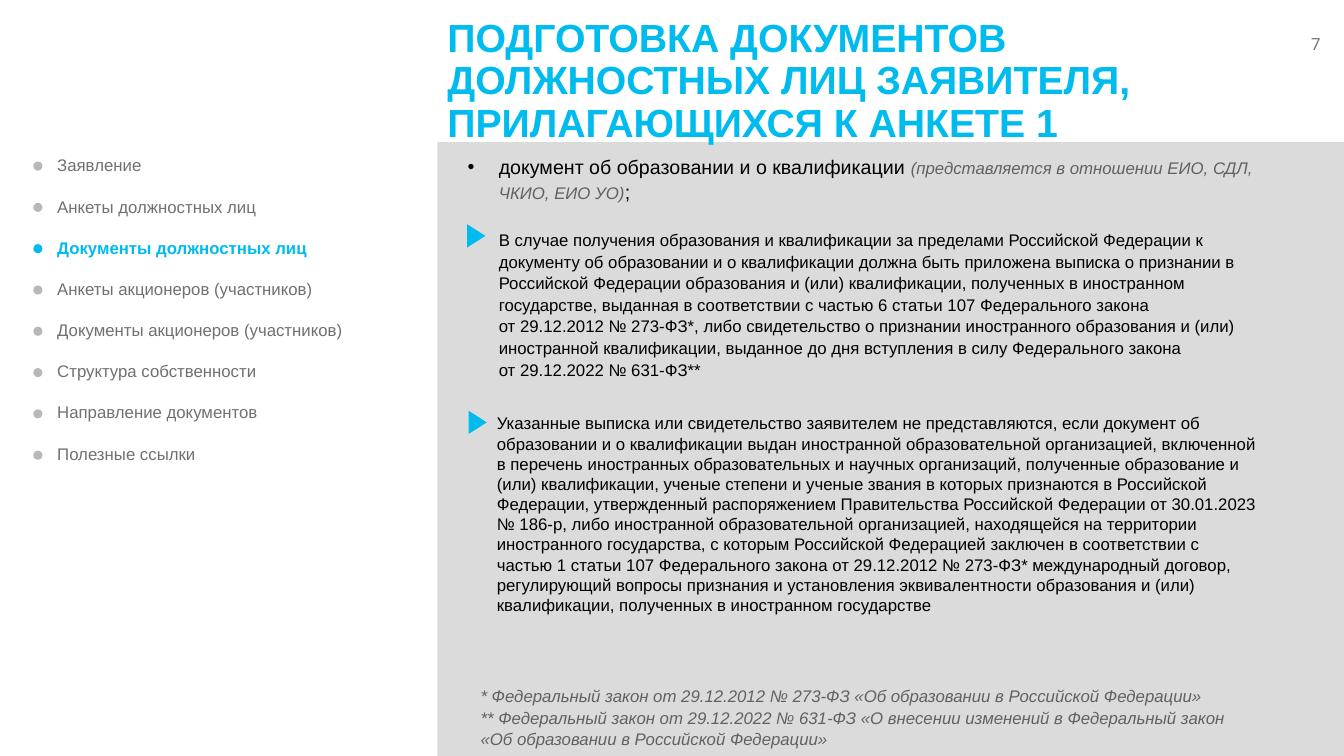
from dataclasses import dataclass

from lxml import etree
from pptx import Presentation
from pptx import util as u
from pptx.dml import color
from pptx.enum import shapes, text
from pptx.oxml import ns

CYAN, BLACK, PANEL = "00BBEE", "000000", "DBDBDC"
NOTE_GRAY, MENU_GRAY, DOT_GRAY, NUMBER_GRAY = "616164", "6F7171", "B7B8B9", "74777B"


@dataclass(frozen=True)
class Span:
    words: str
    size: float = 12
    hue: str = BLACK
    bold: bool = False
    italic: bool = False
    font: str = "Arial"


@dataclass(frozen=True)
class Para:
    spans: tuple[Span, ...]
    spacing: float = 1.0
    before: float = 0
    after: float = 0
    left: float = 0
    hanging: float = 0
    align: text.PP_ALIGN = text.PP_ALIGN.LEFT


@dataclass(frozen=True)
class Area:
    left: float
    top: float
    width: float
    height: float


@dataclass(frozen=True)
class Block:
    area: Area
    paras: tuple[Para, ...]
    anchor: text.MSO_ANCHOR = text.MSO_ANCHOR.TOP


@dataclass(frozen=True)
class Mark:
    kind: shapes.MSO_SHAPE
    area: Area
    hue: str
    rotation: float = 0


def rgb(value: str) -> color.RGBColor:
    return color.RGBColor.from_string(value)


def lengths(area: Area) -> list[u.Pt]:
    return [u.Pt(side) for side in (area.left, area.top, area.width, area.height)]


def draw_mark(page, mark: Mark) -> None:
    shape = page.shapes.add_shape(mark.kind, *lengths(mark.area))
    shape.shadow.inherit = False
    shape.fill.solid()
    shape.fill.fore_color.rgb = rgb(mark.hue)
    shape.line.fill.background()
    shape.rotation = mark.rotation


def indent(para, left: float, hanging: float) -> None:
    """Set the left margin; a hanging indent also gets a round bullet."""
    props = para._p.get_or_add_pPr()
    props.set("marL", str(u.Pt(left)))
    props.set("indent", str(-u.Pt(hanging)))
    if hanging:
        etree.SubElement(props, ns.qn("a:buFont")).set("typeface", "Arial")
        etree.SubElement(props, ns.qn("a:buChar")).set("char", "•")


def add_span(para, span: Span) -> None:
    for number, line in enumerate(span.words.split("\n")):
        if number:
            para.add_line_break()
        run = para.add_run()
        run.text = line
        run.font.name = span.font
        run.font.size = u.Pt(span.size)
        run.font.bold = span.bold
        run.font.italic = span.italic
        run.font.color.rgb = rgb(span.hue)


def draw_block(page, block: Block) -> None:
    frame = page.shapes.add_textbox(*lengths(block.area)).text_frame
    frame.word_wrap = True
    frame.vertical_anchor = block.anchor
    for number, item in enumerate(block.paras):
        para = frame.add_paragraph() if number else frame.paragraphs[0]
        indent(para, item.left, item.hanging)
        para.alignment = item.align
        para.line_spacing = item.spacing
        para.space_before = u.Pt(item.before)
        para.space_after = u.Pt(item.after)
        for span in item.spans:
            add_span(para, span)


MENU = (
    "Заявление",
    "Анкеты должностных лиц",
    "Документы должностных лиц",
    "Анкеты акционеров (участников)",
    "Документы акционеров (участников)",
    "Структура собственности",
    "Направление документов",
    "Полезные ссылки",
)
CURRENT = 2
DOT_TOP, DOT_STEP, DOT_SIZE = 115.4, 29.5, 6.5

EDUCATION = (
    "В случае получения образования и квалификации за пределами Российской Федерации к "
    "документу об образовании и о квалификации должна быть приложена выписка о признании в "
    "Российской Федерации образования и (или) квалификации, полученных в иностранном "
    "государстве, выданная в соответствии с частью 6 статьи 107 Федерального закона \n"
    "от 29.12.2012 № 273-ФЗ*, либо свидетельство о признании иностранного образования и (или) "
    "иностранной квалификации, выданное до дня вступления в силу Федерального закона \n"
    "от 29.12.2022 № 631-ФЗ**"
)
EXCEPTION = (
    Span("Указанные выписка или свидетельство заявителем не представляются, если документ об "
         "образовании и о квалификации выдан иностранной образовательной организацией, включенной "
         "в перечень иностранных образовательных и научных организаций, полученные образование и "
         "(или) квалификации, ученые степени и ученые звания в которых признаются в Российской "
         "Федерации, утвержденный распоряжением Правительства Российской Федерации от 30.01.2023 "
         "№ 186-р, "),
    Span("либо иностранной образовательной организацией, находящейся на территории "
         "иностранного государства, с которым Российской Федерацией заключен в соответствии с "
         "частью 1 статьи 107 Федерального закона от 29.12.2012 № 273-ФЗ* международный договор, "
         "регулирующий вопросы признания и установления эквивалентности образования и (или) "
         "квалификации, полученных в иностранном государстве"),
)
FOOTNOTES = (
    "* Федеральный закон от 29.12.2012 № 273-ФЗ «Об образовании в Российской Федерации»",
    "** Федеральный закон от 29.12.2022 № 631-ФЗ «О внесении изменений в Федеральный закон "
    "«Об образовании в Российской Федерации»",
)
TITLE = "ПОДГОТОВКА ДОКУМЕНТОВ ДОЛЖНОСТНЫХ ЛИЦ ЗАЯВИТЕЛЯ, ПРИЛАГАЮЩИХСЯ К АНКЕТЕ 1"

MARKS = [Mark(shapes.MSO_SHAPE.RECTANGLE, Area(312.5, 101.5, 647.5, 438.5), PANEL)]
MARKS += [
    Mark(shapes.MSO_SHAPE.ISOSCELES_TRIANGLE, Area(left, top, 16.6, 13), CYAN, 90)
    for left, top in ((331.9, 162), (332.9, 295.2))
]
MARKS += [
    Mark(shapes.MSO_SHAPE.OVAL, Area(23.8, DOT_TOP + row * DOT_STEP, DOT_SIZE, DOT_SIZE),
         CYAN if row == CURRENT else DOT_GRAY)
    for row in range(len(MENU))
]

BLOCKS = (
    Block(Area(776.2, 20.2, 174.2, 21.6), (
        Para((Span("7", hue=NUMBER_GRAY, font="Roboto"),), align=text.PP_ALIGN.RIGHT),)),
    Block(Area(313.2, 105.8, 592.6, 188.6), (
        Para((
            Span("документ об образовании и о квалификации ", 14),
            Span("(представляется в отношении ЕИО, СДЛ, ЧКИО, ЕИО УО)",
                 hue=NOTE_GRAY, italic=True),
            Span(";", 14),
        ), spacing=1.07, left=36, hanging=22.3),
        Para((Span(EDUCATION),), spacing=1.07, before=18, left=36))),
    Block(Area(347.8, 291.6, 558, 152.6), (Para(EXCEPTION),)),
    Block(Area(300.2, 485.3, 605.5, 54), tuple(
        Para((Span(note, hue=NOTE_GRAY, italic=True),), spacing=1.07, left=36)
        for note in FOOTNOTES)),
    Block(Area(33.8, 107.3, 265.7, 229.7), tuple(
        Para((Span(label, hue=CYAN if row == CURRENT else MENU_GRAY, bold=row == CURRENT),),
             after=15)
        for row, label in enumerate(MENU))),
    Block(Area(312.5, 6.5, 647.3, 104.4), (
        Para((Span(TITLE, 28, CYAN, bold=True),), spacing=0.9),), text.MSO_ANCHOR.MIDDLE),
)


def main() -> None:
    deck = Presentation()
    deck.slide_width, deck.slide_height = u.Pt(960), u.Pt(540)
    page = deck.slides.add_slide(deck.slide_layouts[6])
    for mark in MARKS:
        draw_mark(page, mark)
    for block in BLOCKS:
        draw_block(page, block)
    deck.save("out.pptx")


if __name__ == "__main__":
    main()
